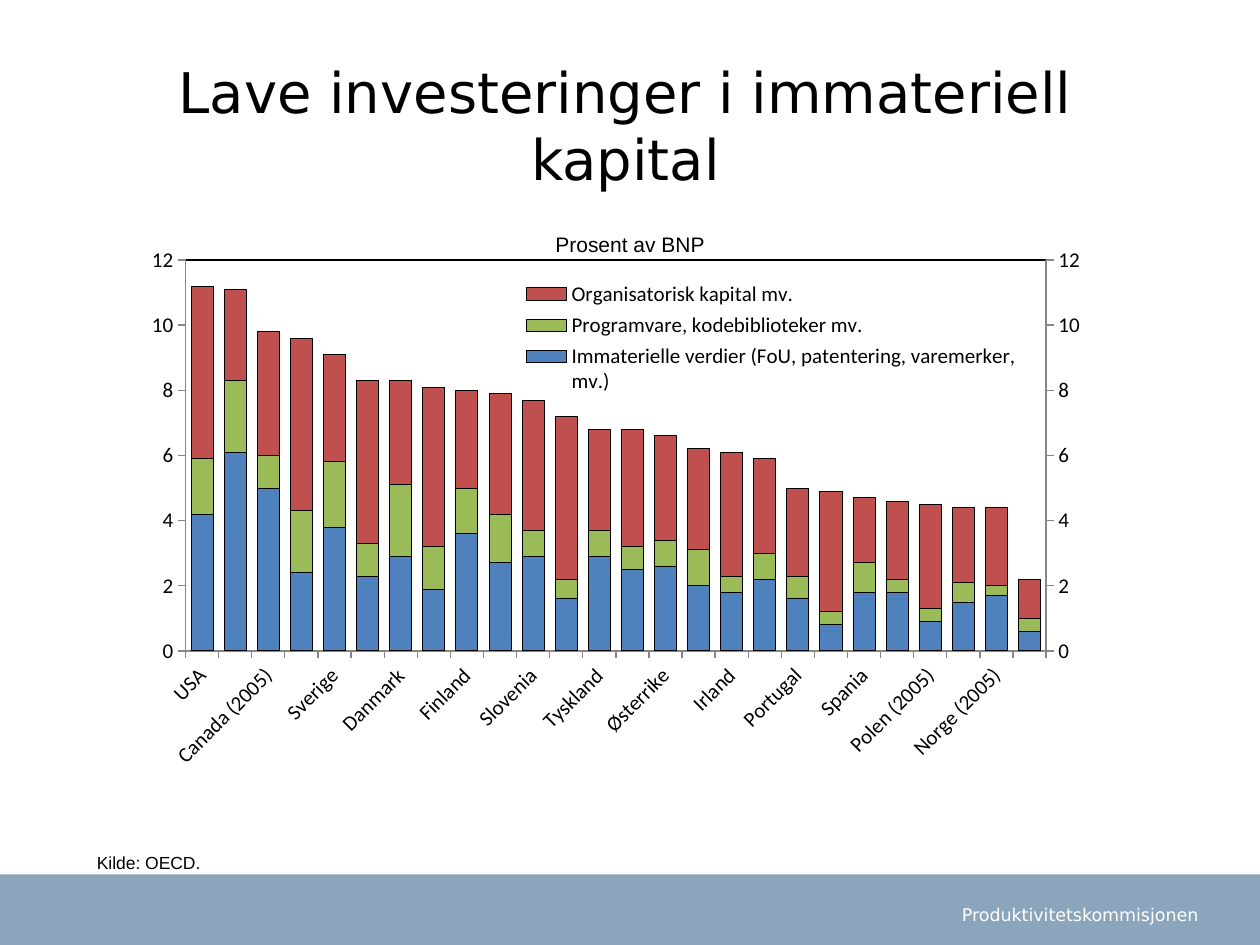
from copy import deepcopy

from pptx import Presentation
from pptx import util as u
from pptx.chart import data
from pptx.dml.color import RGBColor
from pptx.enum import chart as charts, shapes, text
from pptx.oxml import ns, parse_xml

CATEGORIES = [
    "USA", "Japan (2005)", "Canada (2005)", "Storbritannia", "Sverige", "Belgia", "Danmark",
    "Nederland", "Finland", "Frankrike", "Slovenia", "Ungarn (2005)", "Tyskland", "Tjekkia",
    "Østerrike", "Luxembourg", "Irland", "Australia (2006)", "Portugal", "Estland (2005)",
    "Spania", "Slovakia (2006)", "Polen (2005)", "Italia", "Norge (2005)", "Hellas",
]
SERIES = [
    ("Immaterielle verdier (FoU, patentering, varemerker, mv.)", "4F81BD",
     [4.2, 6.1, 5, 2.4, 3.8, 2.3, 2.9, 1.9, 3.6, 2.7, 2.9, 1.6, 2.9,
      2.5, 2.6, 2, 1.8, 2.2, 1.6, 0.8, 1.8, 1.8, 0.9, 1.5, 1.7, 0.6]),
    ("Programvare, kodebiblioteker mv.", "9BBB59",
     [1.7, 2.2, 1, 1.9, 2, 1, 2.2, 1.3, 1.4, 1.5, 0.8, 0.6, 0.8,
      0.7, 0.8, 1.1, 0.5, 0.8, 0.7, 0.4, 0.9, 0.4, 0.4, 0.6, 0.3, 0.4]),
    ("Organisatorisk kapital mv.", "C0504D",
     [5.3, 2.8, 3.8, 5.3, 3.3, 5, 3.2, 4.9, 3, 3.7, 4, 5, 3.1,
      3.6, 3.2, 3.1, 3.8, 2.9, 2.7, 3.7, 2, 2.4, 3.2, 2.3, 2.4, 1.2]),
    ("Series 4", "8064A2", [None] * len(CATEGORIES)),
]


def color(value):
    return RGBColor.from_string(value)


def inches(box):
    return [u.Inches(length) for length in box]


def write(frame, words, size=12, font="Arial", fill="000000",
          align=text.PP_ALIGN.LEFT, anchor=text.MSO_ANCHOR.TOP, wrap=True):
    frame.word_wrap = wrap
    frame.vertical_anchor = anchor
    paragraph = frame.paragraphs[0]
    paragraph.alignment = align
    run = paragraph.add_run()
    run.text = words
    run.font.size = u.Pt(size)
    run.font.name = font
    run.font.color.rgb = color(fill)


def chart_xml(content):
    return parse_xml(f'<c:r {ns.nsdecls("c", "a")}>{content}</c:r>')[0]


def layout_xml(left, top, width, height, target=""):
    modes = '<c:xMode val="edge"/><c:yMode val="edge"/>'
    return chart_xml(
        f'<c:layout><c:manualLayout>{target}{modes}<c:x val="{left}"/><c:y val="{top}"/>'
        f'<c:w val="{width}"/><c:h val="{height}"/></c:manualLayout></c:layout>')


def find_part(chart, tag):
    return chart.element.find(".//" + ns.qn(tag))


def remove_children(element, tag):
    for child in element.findall(ns.qn(tag)):
        element.remove(child)


def format_axis(axis):
    axis.has_major_gridlines = False
    axis.major_tick_mark = charts.XL_TICK_MARK.OUTSIDE
    axis.minor_tick_mark = charts.XL_TICK_MARK.NONE
    axis.format.line.color.rgb = color("868686")
    axis.format.line.width = u.Pt(0.75)
    axis.tick_labels.font.size = u.Pt(12)


def add_right_axis(chart):
    bars = find_part(chart, "c:barChart")
    line = chart_xml('<c:lineChart><c:grouping val="standard"/><c:varyColors val="0"/>'
                     '<c:marker val="1"/><c:axId val="5001"/><c:axId val="5002"/></c:lineChart>')
    bars.addnext(line)
    series = bars.findall(ns.qn("c:ser"))[-1]
    remove_children(series, "c:invertIfNegative")
    line.insert(2, series)

    value = find_part(chart, "c:valAx")
    right, hidden = deepcopy(value), deepcopy(find_part(chart, "c:catAx"))
    value.addnext(right)
    right.addnext(hidden)
    for axis, own, other in ((hidden, "5001", "5002"), (right, "5002", "5001")):
        axis.find(ns.qn("c:axId")).set("val", own)
        axis.find(ns.qn("c:crossAx")).set("val", other)
    hidden.find(ns.qn("c:delete")).set("val", "1")
    right.find(ns.qn("c:axPos")).set("val", "r")
    right.find(ns.qn("c:crosses")).set("val", "max")
    chart.plots[1].series[0].smooth = False


def place_plot(chart):
    plot_area = find_part(chart, "c:plotArea")
    remove_children(plot_area, "c:layout")
    plot_area.insert(0, layout_xml(0.083, 0.035, 0.818, 0.627, '<c:layoutTarget val="inner"/>'))
    plot_area.append(chart_xml(
        '<c:spPr><a:noFill/><a:ln w="9525"><a:solidFill><a:srgbClr val="000000"/>'
        '</a:solidFill></a:ln></c:spPr>'))


def add_legend(chart):
    chart.has_legend = True
    legend = chart.legend
    legend.position = charts.XL_LEGEND_POSITION.RIGHT
    legend.include_in_layout = False
    legend.font.size = u.Pt(12)
    element = find_part(chart, "c:legend")
    remove_children(element, "c:layout")
    position = element.find(ns.qn("c:legendPos"))
    position.addnext(layout_xml(0.39, 0.06, 0.5, 0.2))
    position.addnext(chart_xml(
        '<c:legendEntry><c:idx val="3"/><c:delete val="1"/></c:legendEntry>'))


class Builder:
    def __init__(self, slide):
        self.slide = slide

    def title(self, box, words, **style):
        title = self.slide.shapes.title
        title.left, title.top, title.width, title.height = inches(box)
        write(title.text_frame, words, **style)

    def label(self, box, words, **style):
        shape = self.slide.shapes.add_textbox(*inches(box))
        write(shape.text_frame, words, **style)

    def band(self, box, fill):
        shape = self.slide.shapes.add_shape(shapes.MSO_SHAPE.RECTANGLE, *inches(box))
        shape.shadow.inherit = False
        shape.fill.solid()
        shape.fill.fore_color.rgb = color(fill)
        shape.line.fill.background()

    def stacked_chart(self, box):
        chart_data = data.CategoryChartData()
        chart_data.categories = CATEGORIES
        for name, _, values in SERIES:
            chart_data.add_series(name, values)
        chart = self.slide.shapes.add_chart(
            charts.XL_CHART_TYPE.COLUMN_STACKED, *inches(box), chart_data).chart
        chart.has_title = False
        chart.font.name = "Calibri"
        chart.font.size = u.Pt(12)
        chart.font.color.rgb = color("000000")
        plot = chart.plots[0]
        plot.gap_width, plot.overlap = 50, 100
        plot.vary_by_categories = False
        for series, (_, fill, _) in zip(plot.series, SERIES[:3]):
            series.format.fill.solid()
            series.format.fill.fore_color.rgb = color(fill)
            series.format.line.color.rgb = color("000000")
            series.format.line.width = u.Pt(0.5)
        plot.series[3].format.line.color.rgb = color(SERIES[3][1])

        format_axis(chart.category_axis)
        format_axis(chart.value_axis)
        find_part(chart, "c:catAx").find(".//" + ns.qn("a:bodyPr")).set("rot", "-2700000")
        axis = chart.value_axis
        axis.minimum_scale, axis.maximum_scale, axis.major_unit = 0, 12, 2
        axis.tick_labels.number_format = "0"
        axis.tick_labels.number_format_is_linked = False
        add_right_axis(chart)
        place_plot(chart)
        add_legend(chart)


def main():
    presentation = Presentation()
    presentation.slide_width, presentation.slide_height = inches((10, 7.5))
    builder = Builder(presentation.slides.add_slide(presentation.slide_layouts[5]))
    builder.band((0, 6.94, 10, 0.56), "8BA5BC")
    builder.label((7.05, 7.12, 2.56, 0.27), "Produktivitetskommisjonen", size=10,
                  font="DejaVu Sans", fill="FFFFFF", align=text.PP_ALIGN.RIGHT,
                  anchor=text.MSO_ANCHOR.MIDDLE)
    builder.title((0.79, 0.32, 8.35, 1.25), "Lave investeringer i immateriell kapital",
                  size=32, font="DejaVu Sans", align=text.PP_ALIGN.CENTER,
                  anchor=text.MSO_ANCHOR.BOTTOM)
    builder.stacked_chart((0.78, 1.89, 8.35, 4.95))
    builder.label((0.67, 6.71, 1.03, 0.27), "Kilde: OECD.", size=10, wrap=False)
    builder.label((4.31, 1.79, 1.4, 0.3), "Prosent av BNP", wrap=False)
    presentation.save("out.pptx")


if __name__ == "__main__":
    main()
